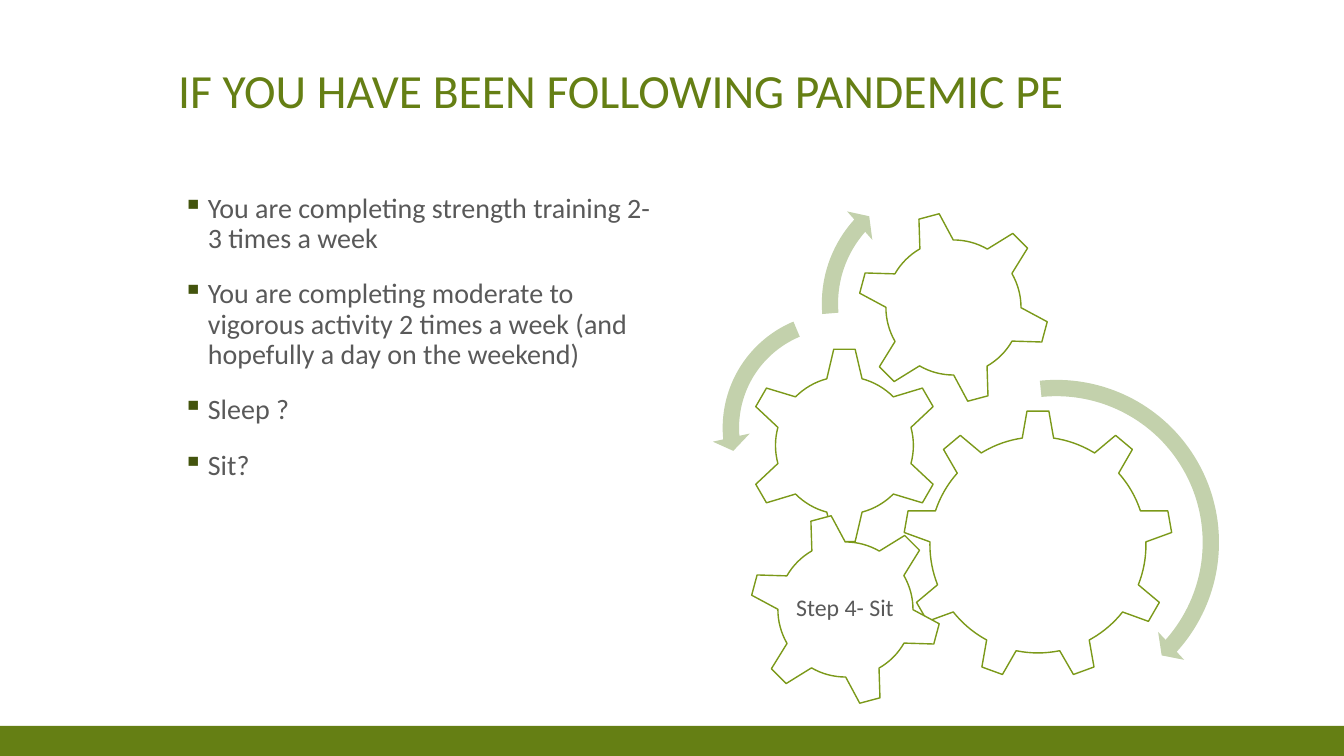
from lxml.etree import SubElement
from pptx import Presentation
from pptx.dml.color import RGBColor
from pptx.enum.shapes import MSO_SHAPE
from pptx.enum.text import MSO_ANCHOR, PP_ALIGN
from pptx.oxml.ns import qn
from pptx.util import Pt

PX = 914400 / 100.8
OLIVE, OUTLINE, SAGE, GREY, DARK = "657F14", "7B9919", "C3D1AC", "595959", "43540D"

HABITS = [
    "You are completing strength training 2-3 times a week",
    "You are completing moderate to vigorous activity 2 times a week (and hopefully a day on the weekend)",
    "Sleep ?",
    "Sit?",
]
GEARS = [
    (MSO_SHAPE.GEAR_9, 203, 242, 270, 0),
    (MSO_SHAPE.GEAR_6, 46, 179, 197, 0),
    (MSO_SHAPE.GEAR_6, 157, 43, 193, 345),
]
ARROWS = [
    (MSO_SHAPE.CIRCULAR_ARROW, 183, 201, 347, (0.047, 2.99, 25.222, 158.482, 0.055)),
    (MSO_SHAPE.LEFT_CIRCULAR_ARROW, 12, 134, 252, (0.065, 4.3, 104.891, 148.378, 0.075)),
    (MSO_SHAPE.CIRCULAR_ARROW, 111, 0, 271, (0.06, 3.941, 133.138, 105.082, 0.07)),
]


def px(length):
    return round(length * PX)


def color(value):
    return RGBColor.from_string(value)


def apply(target, values):
    for key, value in values.items():
        setattr(target, key, value)


def write(paragraph, text, size, ink, **layout):
    run = paragraph.add_run()
    run.text = text
    apply(run.font, {"name": "Calibri", "size": Pt(size)})
    run.font.color.rgb = color(ink)
    apply(paragraph, {"line_spacing": 0.9, **layout})


def add_figure(slide, preset, box, fill, line=None):
    figure = slide.shapes.add_shape(preset, *map(px, box))
    figure.shadow.inherit = False
    figure.fill.solid()
    figure.fill.fore_color.rgb = color(fill)
    if line:
        figure.line.color.rgb = color(line)
        figure.line.width = Pt(1)
    else:
        figure.line.fill.background()
    return figure


def add_heading(slide, box):
    heading = slide.shapes.title
    apply(heading, dict(zip(("left", "top", "width", "height"), map(px, box))))
    frame = heading.text_frame
    apply(frame, {"vertical_anchor": MSO_ANCHOR.BOTTOM, "word_wrap": True, "margin_bottom": px(57)})
    write(frame.paragraphs[0], "IF YOU HAVE BEEN FOLLOWING PANDEMIC PE", 34, OLIVE,
          alignment=PP_ALIGN.LEFT)


def add_bullet(paragraph):
    properties = paragraph._p.get_or_add_pPr()
    properties.set("marL", str(px(30)))
    properties.set("indent", str(px(-25)))
    bullet_color = SubElement(properties, qn("a:buClr"))
    SubElement(bullet_color, qn("a:srgbClr"), val=DARK)
    SubElement(properties, qn("a:buChar"), char="▪")


def add_habits(slide, box):
    frame = slide.shapes.add_textbox(*map(px, box)).text_frame
    frame.word_wrap = True
    for index, habit in enumerate(HABITS):
        paragraph = frame.add_paragraph() if index else frame.paragraphs[0]
        write(paragraph, habit, 20, GREY, space_before=Pt(18))
        add_bullet(paragraph)


def add_gear(slide, preset, left, top, side, rotation):
    gear = add_figure(slide, preset, (left, top, side, side), "FFFFFF", OUTLINE)
    gear.rotation = rotation


def add_gear_train(slide, left, top):
    for preset, x, y, side, rotation in GEARS:
        add_gear(slide, preset, left + x, top + y, side, rotation)
    for preset, x, y, side, bends in ARROWS:
        arrow = add_figure(slide, preset, (left + x, top + y, side, side), SAGE)
        for index, bend in enumerate(bends):
            arrow.adjustments[index] = bend


def add_step_gear(slide, left, top, side):
    add_gear(slide, MSO_SHAPE.GEAR_6, left, top, side, 345)
    inset, label_side = 42, side - 85
    label = slide.shapes.add_textbox(
        *map(px, (left + inset, top + inset, label_side, label_side)))
    frame = label.text_frame
    apply(frame, {"word_wrap": True, "vertical_anchor": MSO_ANCHOR.MIDDLE})
    apply(frame, {f"margin_{edge}": px(2) for edge in ("left", "top", "right", "bottom")})
    write(frame.paragraphs[0], "Step 4- Sit", 17, GREY, alignment=PP_ALIGN.CENTER)


def main():
    deck = Presentation()
    apply(deck, {"slide_width": px(1344), "slide_height": px(756)})
    slide = deck.slides.add_slide(deck.slide_layouts[5])
    add_figure(slide, MSO_SHAPE.RECTANGLE, (0, 726, 1344, 30), OLIVE)
    add_heading(slide, (168, 50, 1008, 126))
    add_habits(slide, (168, 189, 496, 492))
    add_gear_train(slide, 700, 168)
    add_step_gear(slide, 749, 513, 193)
    deck.save("out.pptx")


if __name__ == "__main__":
    main()
